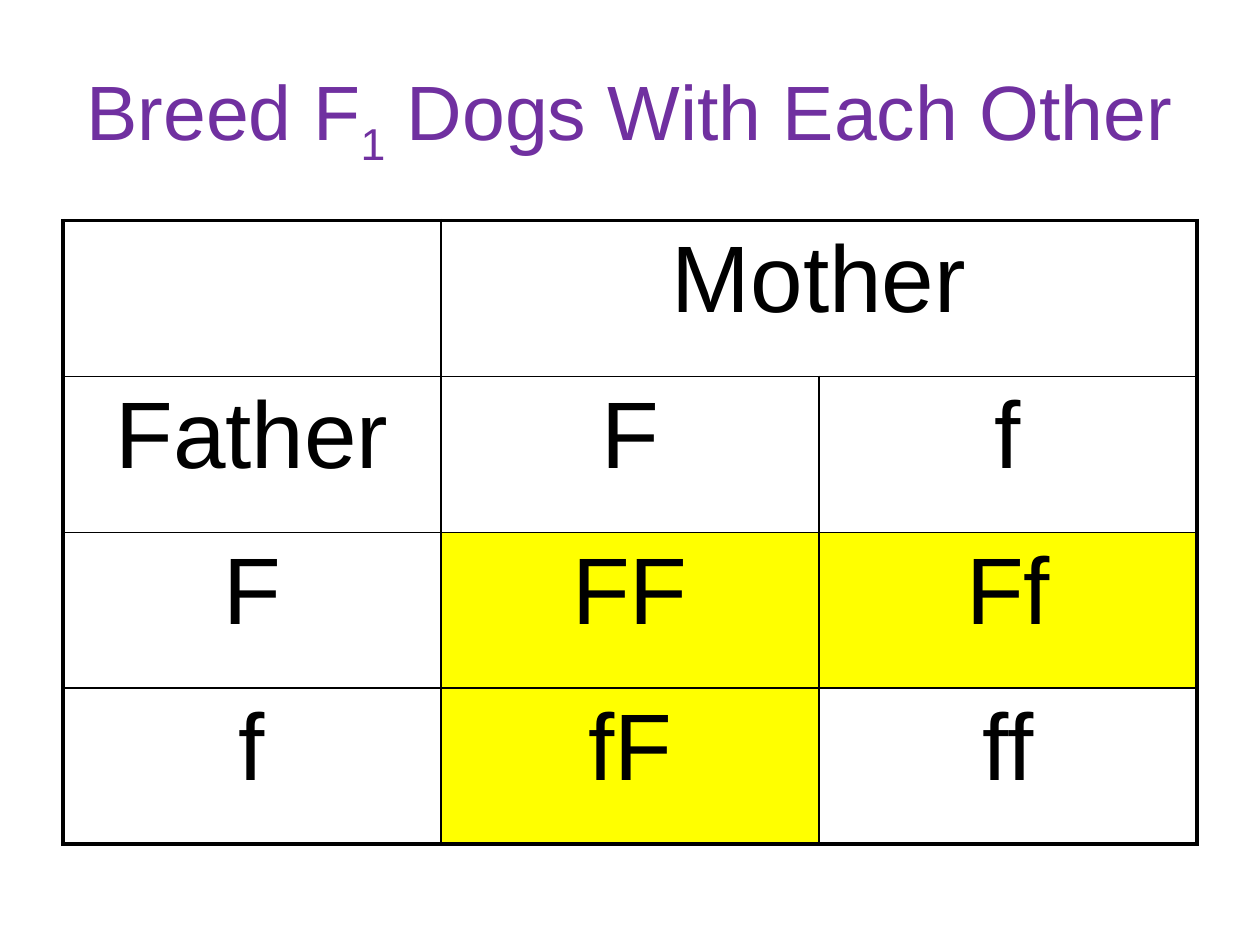
from pptx import Presentation
from pptx.dml.color import RGBColor
from pptx.enum.text import MSO_ANCHOR, PP_ALIGN
from pptx.oxml import parse_xml
from pptx.oxml.ns import nsdecls
from pptx.util import Inches, Pt

CENTER = PP_ALIGN.CENTER
MIDDLE = MSO_ANCHOR.MIDDLE
PURPLE = RGBColor(0x70, 0x30, 0xA0)
YELLOW = RGBColor(0xFF, 0xFF, 0x00)
BLACK = RGBColor(0x00, 0x00, 0x00)
THIN, THICK = Pt(1), Pt(2.25)


def style(font, size, color):
    font.name = "Arial"
    font.size = Pt(size)
    font.color.rgb = color


def border(cell, side, width):
    cell._tc.get_or_add_tcPr().append(parse_xml(
        f'<a:{side} {nsdecls("a")} w="{int(width)}"><a:solidFill>'
        f'<a:srgbClr val="{BLACK}"/></a:solidFill></a:{side}>'))


prs = Presentation()
prs.slide_width, prs.slide_height = Inches(10), Inches(7.5)
slide = prs.slides.add_slide(prs.slide_layouts[6])

# Title with a subscript
box = slide.shapes.add_textbox(Inches(0.5), Inches(0.3), Inches(9), Inches(1.25))
frame = box.text_frame
frame.word_wrap = True
frame.vertical_anchor = MIDDLE
para = frame.paragraphs[0]
para.alignment = CENTER
for text, base in [("Breed F", 0), ("1", -25000), (" Dogs With Each Other", 0)]:
    run = para.add_run()
    run.text = text
    style(run.font, 44, PURPLE)
    if base:
        run._r.get_or_add_rPr().set("baseline", str(base))

# Punnett square
rows = [
    ["", "Mother", ""],
    ["Father", "F", "f"],
    ["F", "FF", "Ff"],
    ["f", "fF", "ff"],
]
healthy = {"FF", "Ff", "fF"}
last_row, last_col = len(rows) - 1, len(rows[0]) - 1
grid = slide.shapes.add_table(len(rows), len(rows[0]), Inches(0.5), Inches(1.75),
                              Inches(9), Inches(4.95)).table
grid.first_row = grid.horz_banding = False
grid.cell(0, 1).merge(grid.cell(0, 2))

for r, row in enumerate(rows):
    for c, text in enumerate(row):
        cell = grid.cell(r, c)
        cell.text_frame.text = text
        para = cell.text_frame.paragraphs[0]
        para.alignment = CENTER
        style(para.font, 54, BLACK)
        for run in para.runs:
            style(run.font, 54, BLACK)
        # Thick outer frame, thin inner lines
        border(cell, "lnL", THICK if c == 0 else THIN)
        border(cell, "lnR", THICK if c == last_col or text == "Mother" else THIN)
        border(cell, "lnT", THICK if r == 0 else THIN)
        border(cell, "lnB", THICK if r == last_row else THIN)
        if text in healthy:
            cell.fill.solid()
            cell.fill.fore_color.rgb = YELLOW
        else:
            cell.fill.background()

prs.save("out.pptx")
